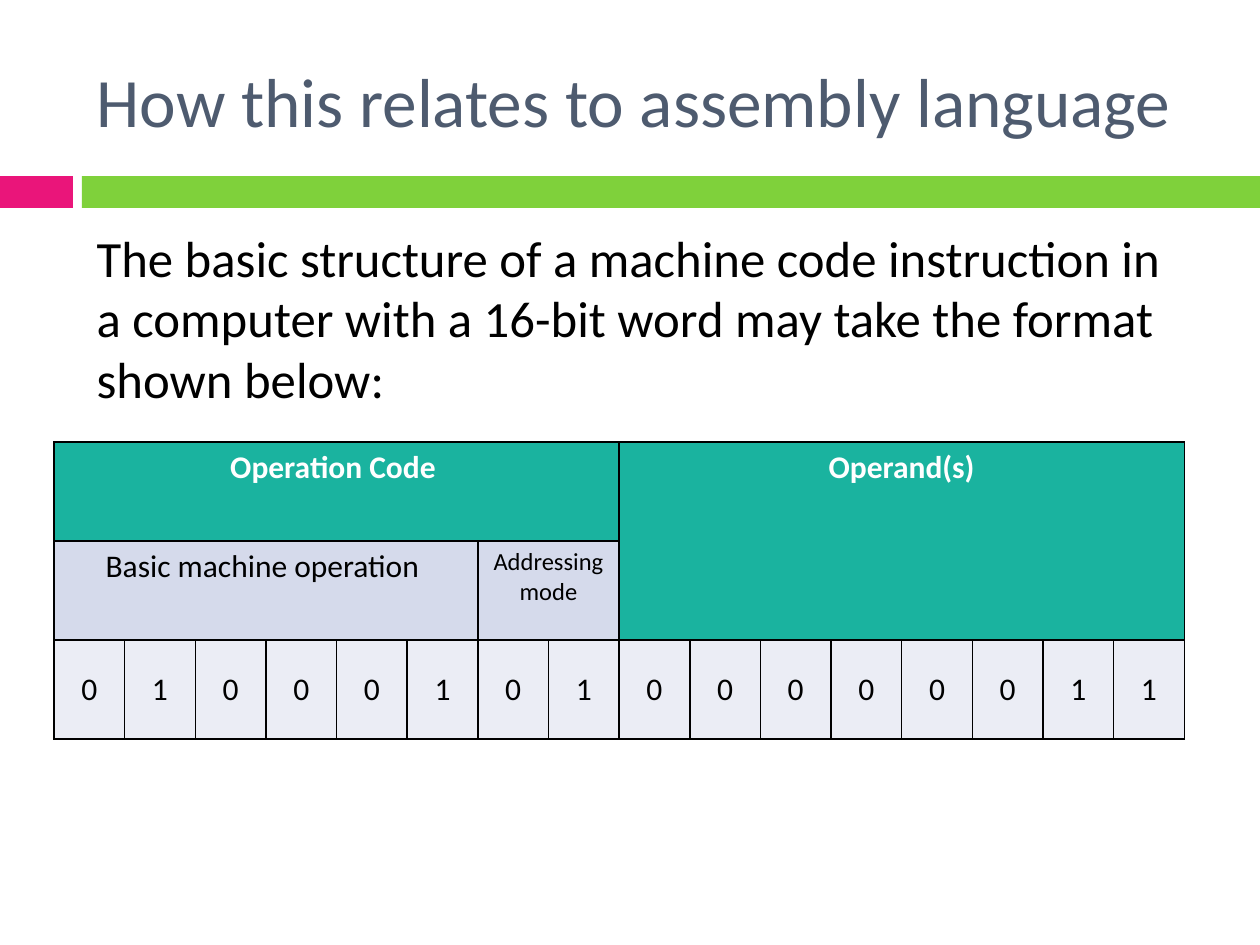
from lxml import etree
from pptx import Presentation
from pptx.dml.color import RGBColor
from pptx.enum.shapes import MSO_SHAPE
from pptx.enum.text import MSO_ANCHOR, MSO_AUTO_SIZE, PP_ALIGN
from pptx.oxml.ns import qn
from pptx.util import Pt

RECTANGLE = MSO_SHAPE.RECTANGLE
TOP, MIDDLE = MSO_ANCHOR.TOP, MSO_ANCHOR.MIDDLE
LEFT, CENTER = PP_ALIGN.LEFT, PP_ALIGN.CENTER
NO_FIT = MSO_AUTO_SIZE.NONE

EMU_PER_PX = 914400 / 126
COLORS = {
    "pink": "EA157A", "green": "7FD13B", "slate": "4E5B6F", "black": "000000",
    "white": "FFFFFF", "teal": "1AB39F", "lavender": "D5DAEB", "pale": "EBEDF5",
}


def px(length):
    return round(length * EMU_PER_PX)


def write(frame, text, size, color, align, bold=False):
    paragraph = frame.paragraphs[0]
    paragraph.alignment = align
    run = paragraph.add_run()
    run.text = text
    font_format = {"name": "Calibri", "size": Pt(size), "bold": bold}
    for attribute, value in font_format.items():
        setattr(run.font, attribute, value)
    run.font.color.rgb = RGBColor.from_string(COLORS[color])
    return paragraph


prs = Presentation()
prs.slide_width, prs.slide_height = px(1260), px(945)
slide = prs.slides.add_slide(prs.slide_layouts[1])

# Bars under the title
for left, width, color in [(0, 73, "pink"), (82, 1178, "green")]:
    bar = slide.shapes.add_shape(RECTANGLE, px(left), px(176), px(width), px(32))
    bar.shadow.inherit = False
    bar.fill.solid()
    bar.fill.fore_color.rgb = RGBColor.from_string(COLORS[color])
    bar.line.fill.background()

# Title and introduction
title, intro = slide.shapes.title, slide.placeholders[1]
for placeholder, top, height, anchor in [(title, 32, 136, MIDDLE), (intro, 220, 698, TOP)]:
    placeholder.left, placeholder.top = px(84), px(top)
    placeholder.width, placeholder.height = px(1124), px(height)
    frame_format = {"auto_size": NO_FIT, "word_wrap": True, "vertical_anchor": anchor}
    for attribute, value in frame_format.items():
        setattr(placeholder.text_frame, attribute, value)

write(title.text_frame, "How this relates to assembly language", 39.6, "slate", LEFT)
sentence = write(
    intro.text_frame,
    "The basic structure of a machine code instruction in a computer "
    "with a 16-bit word may take the format shown below:",
    29, "black", LEFT)
sentence.space_before = Pt(7)
sentence_props = sentence._p.get_or_add_pPr()
sentence_props.set("marL", "0")
sentence_props.set("indent", "0")
etree.SubElement(sentence_props, qn("a:buNone"))

# Instruction word: one column per bit
bits = "0100010100000011"
instruction = slide.shapes.add_table(
    3, len(bits), px(54), px(442), px(1131), px(297)).table
for column in instruction.columns:
    column.width = px(1131 / len(bits))
for row in instruction.rows:
    row.height = px(99)

# row, column, rows spanned, columns spanned, text, size, colour, bold, fill, anchor
fields = [
    (0, 0, 1, 8, "Operation Code ", 18, "white", True, "teal", TOP),
    (0, 8, 2, 8, "Operand(s)", 18, "white", True, "teal", TOP),
    (1, 0, 1, 6, "Basic machine operation ", 18, "black", False, "lavender", TOP),
    (1, 6, 1, 2, "Addressing mode", 14, "black", False, "lavender", TOP),
]
fields += [(2, position, 1, 1, bit, 18, "black", False, "pale", MIDDLE)
           for position, bit in enumerate(bits)]

for row, column, rows, columns, text, size, color, bold, fill, anchor in fields:
    cell = instruction.cell(row, column)
    if rows * columns > 1:
        cell.merge(instruction.cell(row + rows - 1, column + columns - 1))
    cell.vertical_anchor = anchor
    write(cell.text_frame, text, size, color, CENTER, bold)

    # Borders come before the fill in the cell properties
    for r in range(row, row + rows):
        for c in range(column, column + columns):
            part = instruction.cell(r, c)
            cell_props = part._tc.get_or_add_tcPr()
            for side in ("a:lnL", "a:lnR", "a:lnT", "a:lnB"):
                border = etree.SubElement(cell_props, qn(side), w=str(Pt(1)))
                border_fill = etree.SubElement(border, qn("a:solidFill"))
                etree.SubElement(border_fill, qn("a:srgbClr"), val=COLORS["black"])
            part.fill.solid()
            part.fill.fore_color.rgb = RGBColor.from_string(COLORS[fill])

prs.save("out.pptx")
